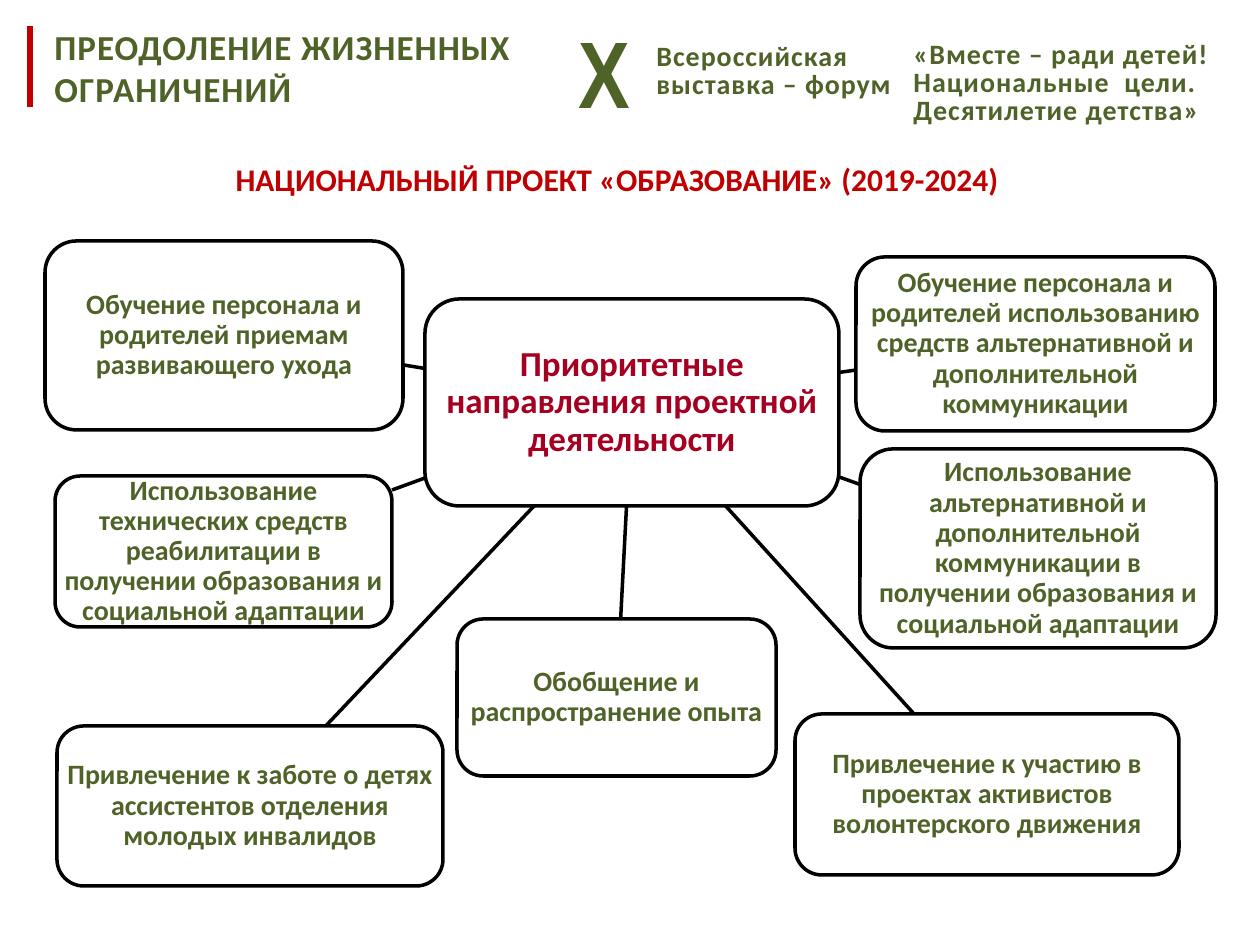
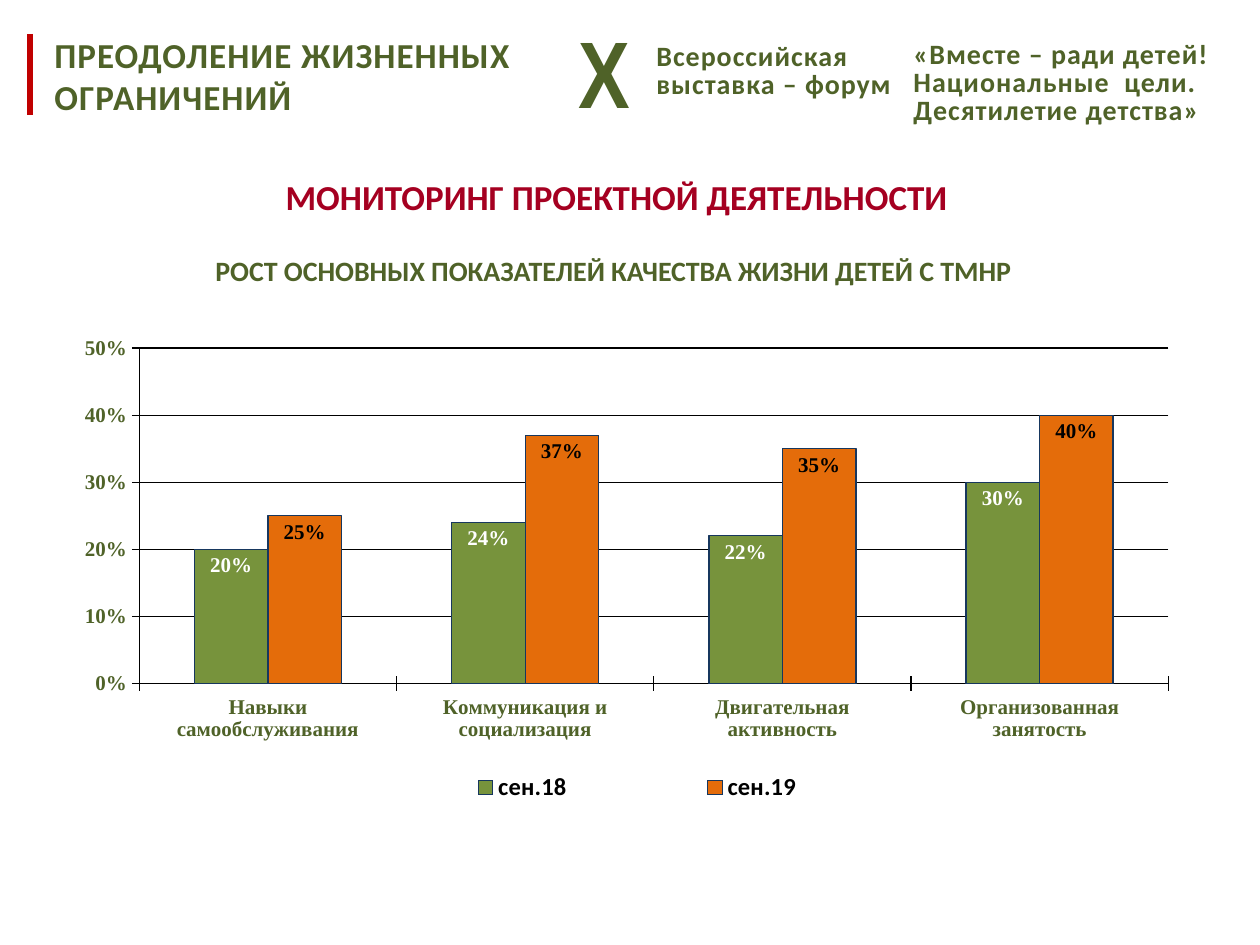
from lxml import etree
from pptx import Presentation
from pptx.chart.data import CategoryChartData
from pptx.dml.color import RGBColor
from pptx.enum.chart import XL_CHART_TYPE, XL_LABEL_POSITION, XL_LEGEND_POSITION, XL_TICK_MARK
from pptx.enum.shapes import MSO_CONNECTOR, MSO_SHAPE
from pptx.enum.text import MSO_ANCHOR, MSO_AUTO_SIZE, PP_ALIGN
from pptx.oxml.ns import qn
from pptx.util import Emu, Pt

COLUMNS = XL_CHART_TYPE.COLUMN_CLUSTERED
INSIDE_END = XL_LABEL_POSITION.INSIDE_END
LEGEND_BOTTOM = XL_LEGEND_POSITION.BOTTOM
TICK_CROSS, TICK_NONE = XL_TICK_MARK.CROSS, XL_TICK_MARK.NONE
STRAIGHT = MSO_CONNECTOR.STRAIGHT
ROUNDED = MSO_SHAPE.ROUNDED_RECTANGLE
TOP, MIDDLE = MSO_ANCHOR.TOP, MSO_ANCHOR.MIDDLE
LEFT, CENTER = PP_ALIGN.LEFT, PP_ALIGN.CENTER
NO_AUTOSIZE = MSO_AUTO_SIZE.NONE

# Shared style
PX_PER_INCH = 126
SLIDE_SIZE = (1260, 945)
GREEN, RED, CRIMSON = "4F6228", "C00000", "A50021"
BLACK, WHITE = "000000", "FFFFFF"
SANS, NARROW, SERIF = "Calibri", "Arial Narrow", "Times New Roman"

# Header: text, box (left, top, width, height), paragraph spacing
FORUM_NUMBER = ("X", (566, 8, 262, 127))
FORUM_TEXTS = [
    ("Всероссийская\nвыставка – форум", (644, 45, 273, 64)),
    ("«Вместе – ради детей!\nНациональные  цели.\nДесятилетие детства»", (901, 43, 347, 93)),
]
SECTION = ("ПРЕОДОЛЕНИЕ ЖИЗНЕННЫХ\nОГРАНИЧЕНИЙ", (42, 19, 612, 97))
SECTION_BAR = (30, 26, 107)  # x, top, bottom

# Slide 1: priorities around a hub
PROJECT_TITLE = ("НАЦИОНАЛЬНЫЙ ПРОЕКТ «ОБРАЗОВАНИЕ» (2019-2024)", (223, 154, 804, 50))
HUB = ("Приоритетные направления проектной деятельности", (425, 299, 414, 207))
PRIORITIES = [
    ("Обучение персонала и родителей использованию средств альтернативной "
     "и дополнительной коммуникации", (856, 257, 359, 174)),
    ("Использование альтернативной и дополнительной коммуникации "
     "в получении образования и социальной адаптации", (860, 449, 356, 199)),
    ("Привлечение к участию в проектах активистов волонтерского движения",
     (795, 714, 384, 161)),
    ("Использование технических средств реабилитации в получении образования "
     "и социальной адаптации", (55, 476, 337, 151)),
    ("Обучение персонала и родителей приемам развивающего ухода", (45, 241, 358, 189)),
    ("Обобщение и распространение опыта", (457, 619, 319, 157)),
    ("Привлечение к заботе о детях ассистентов отделения молодых инвалидов",
     (57, 726, 386, 160)),
]

# Slide 2: growth chart
MONITORING_TITLE = ("МОНИТОРИНГ ПРОЕКТНОЙ ДЕЯТЕЛЬНОСТИ", (273, 169, 694, 55))
GROWTH_SUBTITLE = ("РОСТ ОСНОВНЫХ ПОКАЗАТЕЛЕЙ КАЧЕСТВА ЖИЗНИ ДЕТЕЙ С ТМНР", (203, 247, 833, 47))
CHART_BOX = (0, 324, 1191, 515)
CATEGORIES = ["Навыки самообслуживания", "Коммуникация и социализация",
              "Двигательная активность", "Организованная занятость"]
SERIES = [  # name, values, fill, label colour
    ("сен.18", (0.20, 0.24, 0.22, 0.30), "77933C", WHITE),
    ("сен.19", (0.25, 0.37, 0.35, 0.40), "E46C0A", BLACK),
]
BAR_OUTLINE = "17375E"
PLOT_AREA = (0.117, 0.047, 0.864, 0.651)
LEGEND_AREA = (0.29, 0.86, 0.49, 0.08)


def px(length):
    return Emu(round(length * 914400 / PX_PER_INCH))


def scaled(box):
    return [px(length) for length in box]


def color(hex_string):
    return RGBColor.from_string(hex_string)


def set_font(font, size, hex_color, name=SANS):
    font.name, font.size, font.bold = name, Pt(size), True
    font.color.rgb = color(hex_color)


def set_line(line, hex_color, width):
    line.color.rgb = color(hex_color)
    line.width = Pt(width)


def write(shape, text, size, hex_color, name=SANS, align=LEFT, anchor=TOP, tracking=None):
    frame = shape.text_frame
    frame.text = text
    frame.word_wrap = True
    frame.auto_size = NO_AUTOSIZE
    frame.vertical_anchor = anchor
    for paragraph in frame.paragraphs:
        paragraph.alignment = align
        for run in paragraph.runs:
            set_font(run.font, size, hex_color, name)
            if tracking:
                run._r.get_or_add_rPr().set("spc", str(tracking))
    return frame


def add_text(slide, content, size, hex_color, **style):
    text, box = content
    return write(slide.shapes.add_textbox(*scaled(box)), text, size, hex_color, **style)


def set_title(slide, content, size, hex_color):
    text, box = content
    title = slide.shapes.title
    title.left, title.top, title.width, title.height = scaled(box)
    write(title, text, size, hex_color)


def add_line(slide, start, end, hex_color, width):
    connector = slide.shapes.add_connector(STRAIGHT, *scaled(start), *scaled(end))
    set_line(connector.line, hex_color, width)
    etree.SubElement(connector._element.spPr, qn("a:effectLst"))


def add_header(slide, section_shift):
    add_text(slide, FORUM_NUMBER, 54, GREEN, name=NARROW, tracking=-300)
    for content in FORUM_TEXTS:
        frame = add_text(slide, content, 16, GREEN, tracking=60)
        for index, paragraph in enumerate(frame.paragraphs):
            paragraph.line_spacing = Pt(12)
            paragraph.space_before = Pt(2 if index else 0)
            paragraph.space_after = Pt(2)
    x, top, bottom = SECTION_BAR
    add_line(slide, (x, top + section_shift), (x, bottom + section_shift), RED, 3)
    text, (left, top, width, height) = SECTION
    add_text(slide, (text, (left, top + section_shift, width, height)), 20, GREEN, tracking=60)


def center(box):
    left, top, width, height = box
    return left + width / 2, top + height / 2


def edge_point(box, target):
    """Point where the ray from the box centre to the target leaves the box."""
    x, y = center(box)
    dx, dy = target[0] - x, target[1] - y
    share = 1 / max(abs(dx) / (box[2] / 2), abs(dy) / (box[3] / 2))
    return x + dx * share, y + dy * share


def add_box(slide, content, size, hex_color):
    text, box = content
    shape = slide.shapes.add_shape(ROUNDED, *scaled(box))
    shape.shadow.inherit = False
    shape.fill.solid()
    shape.fill.fore_color.rgb = color(WHITE)
    set_line(shape.line, BLACK, 2)
    frame = write(shape, text, size, hex_color, align=CENTER, anchor=MIDDLE)
    frame.margin_left = frame.margin_right = frame.margin_top = frame.margin_bottom = 0
    frame.paragraphs[0].line_spacing = 0.9


def set_layout(element, position, area, inner=False):
    """Place a chart part by fractions of the chart area."""
    for layout in element.findall(qn("c:layout")):
        element.remove(layout)
    layout = etree.Element(qn("c:layout"))
    manual = etree.SubElement(layout, qn("c:manualLayout"))
    settings = [("layoutTarget", "inner")] if inner else []
    settings += [("xMode", "edge"), ("yMode", "edge"), *zip("xywh", area)]
    for tag, value in settings:
        etree.SubElement(manual, qn("c:" + tag)).set("val", str(value))
    element.insert(position, layout)


def add_growth_chart(slide):
    data = CategoryChartData(number_format="0%")
    data.categories = CATEGORIES
    for name, values, *_ in SERIES:
        data.add_series(name, values)
    chart = slide.shapes.add_chart(COLUMNS, *scaled(CHART_BOX), data).chart
    chart.has_title = False
    chart.font.name, chart.font.size = SANS, Pt(18)

    # Columns and labels
    plot = chart.plots[0]
    plot.vary_by_categories = False
    plot.gap_width, plot.overlap = 150, 0
    for series, (_, _, fill, label_color) in zip(plot.series, SERIES):
        series.format.fill.solid()
        series.format.fill.fore_color.rgb = color(fill)
        set_line(series.format.line, BAR_OUTLINE, 0.75)
        labels = series.data_labels
        labels.show_value = True
        labels.position = INSIDE_END
        labels.number_format, labels.number_format_is_linked = "0%", False
        set_font(labels.font, 12, label_color, SERIF)

    # Axes
    for axis in (chart.category_axis, chart.value_axis):
        axis.major_tick_mark, axis.minor_tick_mark = TICK_CROSS, TICK_NONE
        set_line(axis.format.line, BLACK, 0.75)
        set_font(axis.tick_labels.font, 12, GREEN, SERIF)
    values = chart.value_axis
    values.minimum_scale, values.maximum_scale, values.major_unit = 0, 0.5, 0.1
    values.tick_labels.number_format = "0%"
    values.tick_labels.number_format_is_linked = False
    set_line(values.major_gridlines.format.line, BLACK, 0.75)

    # Legend and layout
    chart.has_legend = True
    chart.legend.position = LEGEND_BOTTOM
    chart.legend.include_in_layout = False
    set_font(chart.legend.font, 14, BLACK)
    set_layout(chart._chartSpace.chart.plotArea, 0, PLOT_AREA, inner=True)
    set_layout(chart.legend._element, 1, LEGEND_AREA)


def build_priorities(slide):
    add_header(slide, 0)
    set_title(slide, PROJECT_TITLE, 18, RED)
    hub_box = HUB[1]
    for _, box in PRIORITIES:
        add_line(slide, edge_point(hub_box, center(box)), edge_point(box, center(hub_box)), BLACK, 2)
    add_box(slide, HUB, 20, CRIMSON)
    for priority in PRIORITIES:
        add_box(slide, priority, 16, GREEN)


def build_monitoring(slide):
    add_header(slide, 8)
    set_title(slide, MONITORING_TITLE, 20, CRIMSON)
    add_growth_chart(slide)
    add_text(slide, GROWTH_SUBTITLE, 16, GREEN)


def main():
    presentation = Presentation()
    presentation.slide_width, presentation.slide_height = scaled(SLIDE_SIZE)
    title_only = presentation.slide_layouts[5]
    for build in (build_priorities, build_monitoring):
        build(presentation.slides.add_slide(title_only))
    presentation.save("out.pptx")


if __name__ == "__main__":
    main()
